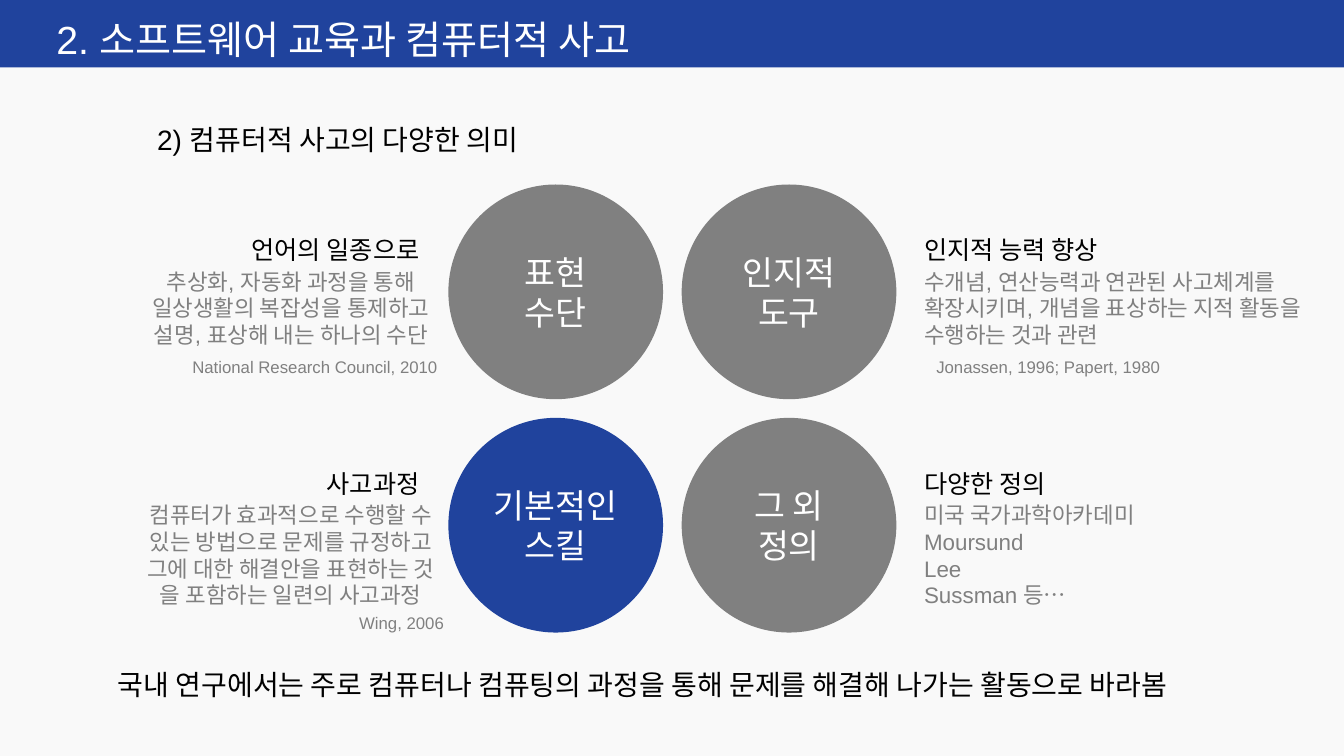
from pptx import Presentation
from pptx.dml.color import RGBColor
from pptx.enum.shapes import MSO_SHAPE
from pptx.enum.text import MSO_ANCHOR, PP_ALIGN
from pptx.util import Cm, Pt

LEFT, CENTER, RIGHT = PP_ALIGN.LEFT, PP_ALIGN.CENTER, PP_ALIGN.RIGHT
TOP, MIDDLE = MSO_ANCHOR.TOP, MSO_ANCHOR.MIDDLE
RECT, OVAL = MSO_SHAPE.RECTANGLE, MSO_SHAPE.OVAL

FONT = "Arial"
COLORS = {
    "background": "F9F9F9",
    "blue": "20439D",
    "gray": "808080",
    "black": "000000",
    "white": "FFFFFF",
}

DIAMETER = 5.41
PITCH = 5.88
GRID_LEFT, GRID_TOP = 11.3, 4.65
HEADING_OFFSET, BODY_OFFSET = 1.14, 1.97
LEFT_COLUMN = {"heading": (3.2, 7.62, RIGHT), "body": (3.2, 8.26, CENTER)}
RIGHT_COLUMN = {"heading": (23.04, 10.7, LEFT), "body": (23.04, 10.7, LEFT)}
CITATION_WIDTH = 7.2

MEANINGS = [
    (0, 0, "gray", ["표현", "수단"], "언어의 일종으로",
     ["추상화, 자동화 과정을 통해",
      "일상생활의 복잡성을 통제하고",
      "설명, 표상해 내는 하나의 수단"]),
    (0, 1, "gray", ["인지적", "도구"], "인지적 능력 향상",
     ["수개념, 연산능력과 연관된 사고체계를",
      "확장시키며, 개념을 표상하는 지적 활동을",
      "수행하는 것과 관련"]),
    (1, 0, "blue", ["기본적인", "스킬"], "사고과정",
     ["컴퓨터가 효과적으로 수행할 수",
      "있는 방법으로 문제를 규정하고",
      "그에 대한 해결안을 표현하는 것",
      "을 포함하는 일련의 사고과정"]),
    (1, 1, "gray", ["그 외", "정의"], "다양한 정의",
     ["미국 국가과학아카데미", "Moursund", "Lee", "Sussman 등…"]),
]

CITATIONS = [
    (7.94, 8.86, "National Research Council, 2010"),
    (26.42, 8.86, "Jonassen, 1996; Papert, 1980"),
    (10.12, 15.32, "Wing, 2006"),
]


def rgb(name):
    return RGBColor.from_string(COLORS[name])


def write_lines(tf, lines, size, color, align, anchor=TOP):
    tf.word_wrap = True
    tf.vertical_anchor = anchor
    for i, line in enumerate(lines):
        p = tf.paragraphs[0] if i == 0 else tf.add_paragraph()
        p.text = line
        p.alignment = align
        p.font.name = FONT
        p.font.size = Pt(size)
        p.font.color.rgb = rgb(color)


def add_text(s, left, top, width, lines, size, color="black", align=LEFT):
    height = 0.25 + len(lines) * size * 0.0423
    sp = s.shapes.add_textbox(Cm(left), Cm(top), Cm(width), Cm(height))
    write_lines(sp.text_frame, lines, size, color, align)


def add_filled(s, kind, left, top, width, height, color):
    sp = s.shapes.add_shape(kind, Cm(left), Cm(top), Cm(width), Cm(height))
    sp.shadow.inherit = False
    sp.fill.solid()
    sp.fill.fore_color.rgb = rgb(color)
    sp.line.fill.background()
    return sp


def add_circle(s, left, top, color, lines):
    sp = add_filled(s, OVAL, left, top, DIAMETER, DIAMETER, color)
    write_lines(sp.text_frame, lines, 24, "white", CENTER, MIDDLE)


def add_meaning(s, row, col, color, name, heading, body):
    top = GRID_TOP + row * PITCH
    column = RIGHT_COLUMN if col else LEFT_COLUMN
    add_circle(s, GRID_LEFT + col * PITCH, top, color, name)
    left, width, align = column["heading"]
    add_text(s, left, top + HEADING_OFFSET, width, [heading], 18, align=align)
    left, width, align = column["body"]
    add_text(s, left, top + BODY_OFFSET, width, body, 16, "gray", align)


def main():
    prs = Presentation()
    prs.slide_width, prs.slide_height = Cm(33.87), Cm(19.05)
    s = prs.slides.add_slide(prs.slide_layouts[6])
    s.background.fill.solid()
    s.background.fill.fore_color.rgb = rgb("background")

    add_filled(s, RECT, 0, 0, 33.87, 1.7, "blue")
    add_text(s, 1.17, 0.25, 16.41, ["2. 소프트웨어 교육과 컴퓨터적 사고"], 28, "white")
    add_text(s, 3.71, 2.97, 10.49, ["2) 컴퓨터적 사고의 다양한 의미"], 20)
    for meaning in MEANINGS:
        add_meaning(s, *meaning)
    for center, top, source in CITATIONS:
        add_text(s, center - CITATION_WIDTH / 2, top, CITATION_WIDTH, [source],
                 12, "gray", CENTER)
    add_text(s, 2.72, 16.69, 29.74,
             ["국내 연구에서는 주로 컴퓨터나 컴퓨팅의 과정을 통해 문제를 해결해 나가는 활동으로 바라봄"], 20)

    prs.save("out.pptx")


if __name__ == "__main__":
    main()
